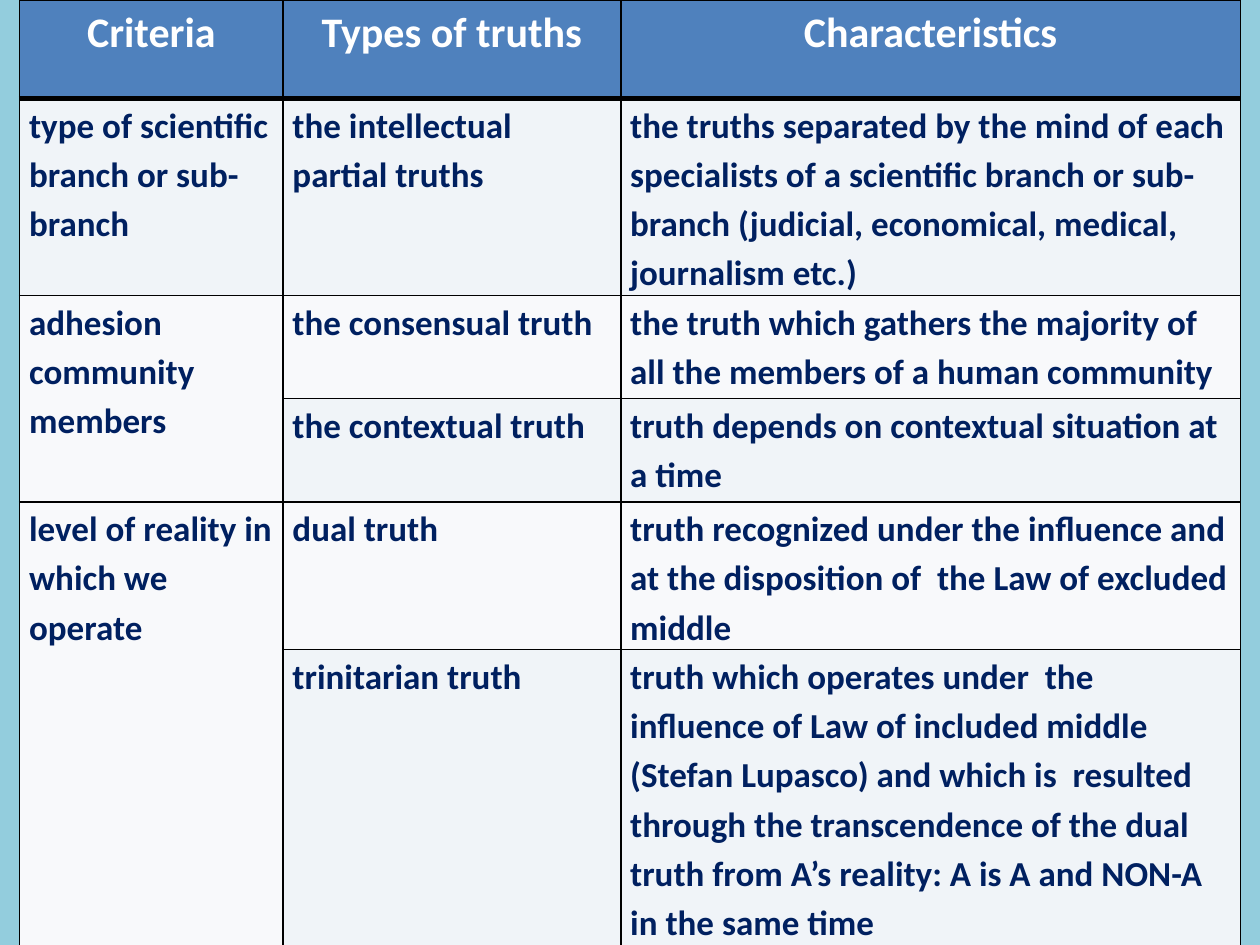
from lxml import etree
from pptx import Presentation
from pptx.dml.color import RGBColor
from pptx.enum import text
from pptx.oxml import ns
from pptx.util import Pt

WIDTHS = [150.5, 193, 354.2]
HEIGHTS = [56.2, 112.3, 59, 59, 84.2, 169.3]
BANDS = ["F0F4F8", "F8F9FB"]
ROWS = [
    ["Criteria", "Types of truths", "Characteristics"],
    ["type of scientific branch or sub-branch", "the intellectual partial truths",
     "the truths separated by the mind of each specialists of a scientific branch "
     "or sub-branch (judicial, economical, medical, journalism etc.)"],
    ["adhesion community members", "the consensual truth",
     "the truth which gathers the majority of all the members of a human community"],
    [None, "the contextual truth", "truth depends on contextual situation at a time"],
    ["level of reality in which we operate", "dual truth",
     "truth recognized under the influence and at the disposition of  the Law of "
     "excluded middle"],
    [None, "trinitarian truth",
     "truth which operates under  the influence of Law of included middle (Stefan "
     "Lupasco) and which is  resulted through the transcendence of the dual truth "
     "from A’s reality: A is A and NON-A in the same time"],
]


def color(value):
    return RGBColor.from_string(value)


def paint(fill, value):
    fill.solid()
    fill.fore_color.rgb = color(value)


def add_borders(cell, row):
    """Thin black lines, with a thick one under the header row."""
    props = cell._tc.get_or_add_tcPr()
    for place, side in enumerate("LRTB"):
        thick = (row, side) in [(0, "B"), (1, "T")]
        line = etree.Element(ns.qn("a:ln" + side), w=str(Pt(3 if thick else 1)))
        fill = etree.SubElement(line, ns.qn("a:solidFill"))
        etree.SubElement(fill, ns.qn("a:srgbClr"), val="000000")
        props.insert(place, line)


def style_cell(cell, row, words):
    head = row == 0
    cell.margin_left = cell.margin_right = Pt(5.4)
    cell.margin_top = cell.margin_bottom = 0
    paint(cell.fill, "4F81BD" if head else BANDS[(row - 1) % 2])
    add_borders(cell, row)
    if words is None:
        return
    cell.text = words
    para = cell.text_frame.paragraphs[0]
    para.alignment = text.PP_ALIGN.CENTER if head else text.PP_ALIGN.LEFT
    para.line_spacing = 1.15
    font = para.font
    font.name, font.bold = "Calibri", True
    font.size = Pt(24 if head else 20)
    font.color.rgb = color("FFFFFF" if head else "002060")


def add_truths(slide, left, top):
    box = [Pt(n) for n in (left, top, sum(WIDTHS), sum(HEIGHTS))]
    table = slide.shapes.add_table(len(ROWS), len(WIDTHS), *box).table
    for col, width in zip(table.columns, WIDTHS):
        col.width = Pt(width)
    for row, height in zip(table.rows, HEIGHTS):
        row.height = Pt(height)
    for r, row in enumerate(ROWS):
        for c, words in enumerate(row):
            style_cell(table.cell(r, c), r, words)
        if row[0] is None:
            table.cell(r - 1, 0).merge(table.cell(r, 0))


def main():
    deck = Presentation()
    deck.slide_width, deck.slide_height = Pt(720), Pt(540)
    slide = deck.slides.add_slide(deck.slide_layouts[6])
    paint(slide.background.fill, "93CDDD")
    add_truths(slide, 11.25, 0)
    deck.save("out.pptx")


if __name__ == "__main__":
    main()
